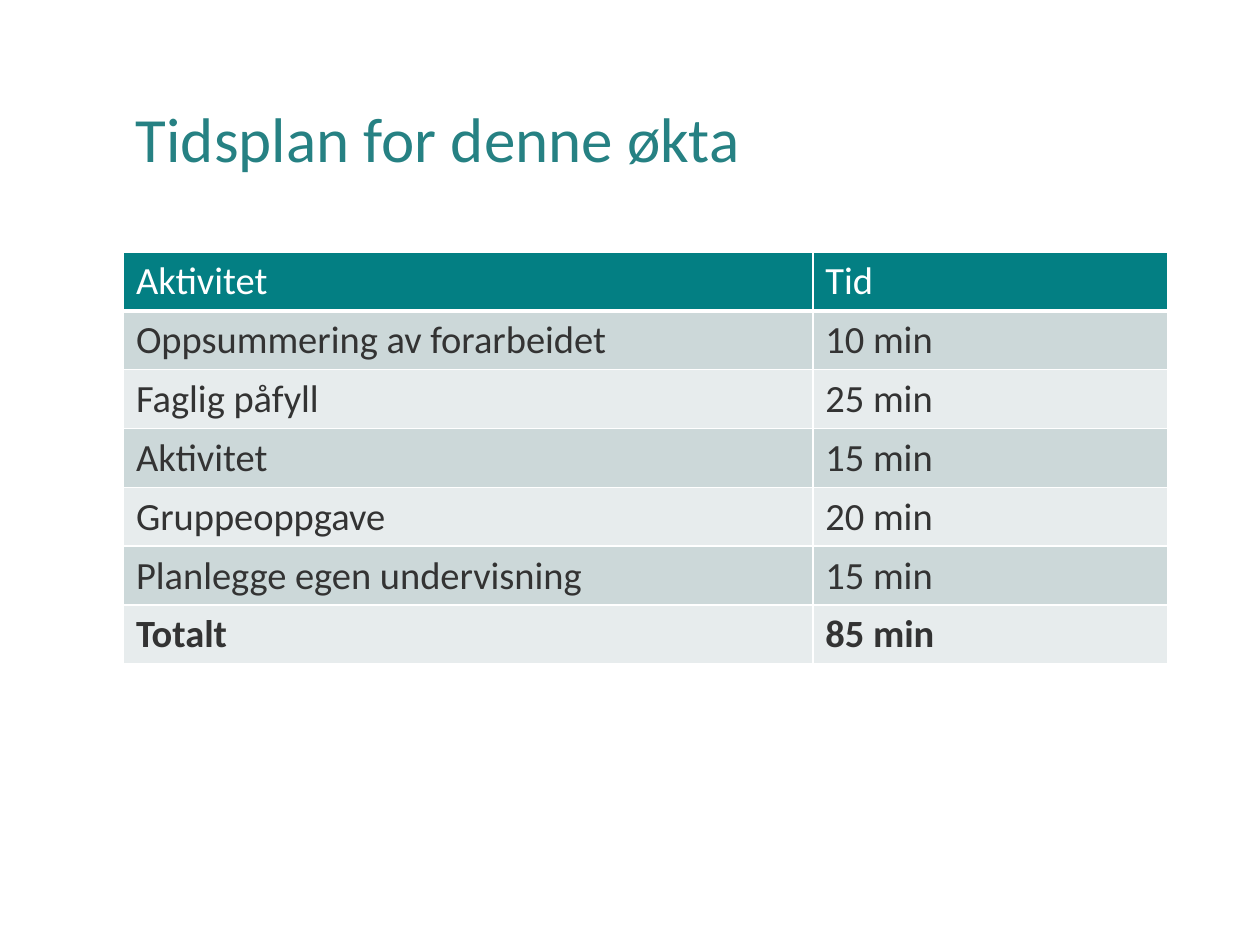
import dataclasses

import pptx
import pptx.dml.color
import pptx.enum.text
import pptx.oxml
import pptx.oxml.ns
import pptx.util


@dataclasses.dataclass(frozen=True)
class Theme:
    font: str = "Calibri"
    heading: str = "268183"
    header_fill: str = "037F83"
    header_text: str = "FFFFFF"
    body_text: str = "333333"
    bands: tuple = ("CCD8D9", "E7ECED")
    rule: str = "FFFFFF"
    heading_size: int = 36
    table_size: int = 22
    thin: int = 1
    thick: int = 3


@dataclasses.dataclass(frozen=True)
class Box:
    left: int
    top: int
    width: int
    height: int


THEME = Theme()
SLIDE_WIDTH = pptx.util.Inches(10)
SLIDE_HEIGHT = pptx.util.Inches(7.5)
COLUMNS, ROWS = 100, 75
ACTIVITY_SHARE = 0.66

HEADING = "Tidsplan for denne økta"
SCHEDULE = [
    ("Aktivitet", "Tid"),
    ("Oppsummering av forarbeidet", "10 min"),
    ("Faglig påfyll", "25 min"),
    ("Aktivitet", "15 min"),
    ("Gruppeoppgave", "20 min"),
    ("Planlegge egen undervisning", "15 min"),
    ("Totalt", "85 min"),
]


def grid_box(column, row, columns, rows):
    return Box(
        int(SLIDE_WIDTH * column / COLUMNS),
        int(SLIDE_HEIGHT * row / ROWS),
        int(SLIDE_WIDTH * columns / COLUMNS),
        int(SLIDE_HEIGHT * rows / ROWS),
    )


def rgb(value):
    return pptx.dml.color.RGBColor.from_string(value)


def write(frame, text, *, size, color, bold=False, line_spacing=None):
    paragraph = frame.paragraphs[0]
    paragraph.line_spacing = line_spacing
    run = paragraph.add_run()
    run.text = text
    run.font.name = THEME.font
    run.font.size = pptx.util.Pt(size)
    run.font.bold = bold
    run.font.color.rgb = rgb(color)


def set_borders(cell, widths):
    properties = cell._tc.get_or_add_tcPr()
    for position, (side, width) in enumerate(widths.items()):
        border = pptx.oxml.parse_xml(
            f'<a:{side} {pptx.oxml.ns.nsdecls("a")} w="{pptx.util.Pt(width)}">'
            f'<a:solidFill><a:srgbClr val="{THEME.rule}"/></a:solidFill>'
            f"</a:{side}>"
        )
        properties.insert(position, border)


def add_heading(slide, box):
    heading = slide.shapes.add_textbox(box.left, box.top, box.width, box.height)
    frame = heading.text_frame
    frame.word_wrap = True
    frame.vertical_anchor = pptx.enum.text.MSO_ANCHOR.MIDDLE
    write(frame, HEADING, size=THEME.heading_size, color=THEME.heading, line_spacing=0.9)


def add_schedule(slide, box):
    schedule = slide.shapes.add_table(
        len(SCHEDULE), len(SCHEDULE[0]), box.left, box.top, box.width, box.height
    ).table
    activity_width = int(box.width * ACTIVITY_SHARE)
    schedule.columns[0].width = activity_width
    schedule.columns[1].width = box.width - activity_width
    last = len(SCHEDULE) - 1
    for index, entries in enumerate(SCHEDULE):
        is_header = index == 0
        fill = THEME.header_fill if is_header else THEME.bands[(index - 1) % 2]
        color = THEME.header_text if is_header else THEME.body_text
        widths = {
            "lnL": THEME.thin,
            "lnR": THEME.thin,
            "lnT": THEME.thick if index == 1 else THEME.thin,
            "lnB": THEME.thick if is_header else THEME.thin,
        }
        for column, text in enumerate(entries):
            cell = schedule.cell(index, column)
            cell.fill.solid()
            cell.fill.fore_color.rgb = rgb(fill)
            set_borders(cell, widths)
            write(
                cell.text_frame,
                text,
                size=THEME.table_size,
                color=color,
                bold=index == last,
            )


def main():
    presentation = pptx.Presentation()
    presentation.slide_width = SLIDE_WIDTH
    presentation.slide_height = SLIDE_HEIGHT
    slide = presentation.slides.add_slide(presentation.slide_layouts[6])
    add_heading(slide, grid_box(9.8, 4, 82.9, 14.5))
    add_schedule(slide, grid_box(9.8, 20, 82.9, 32.7))
    presentation.save("out.pptx")


if __name__ == "__main__":
    main()
